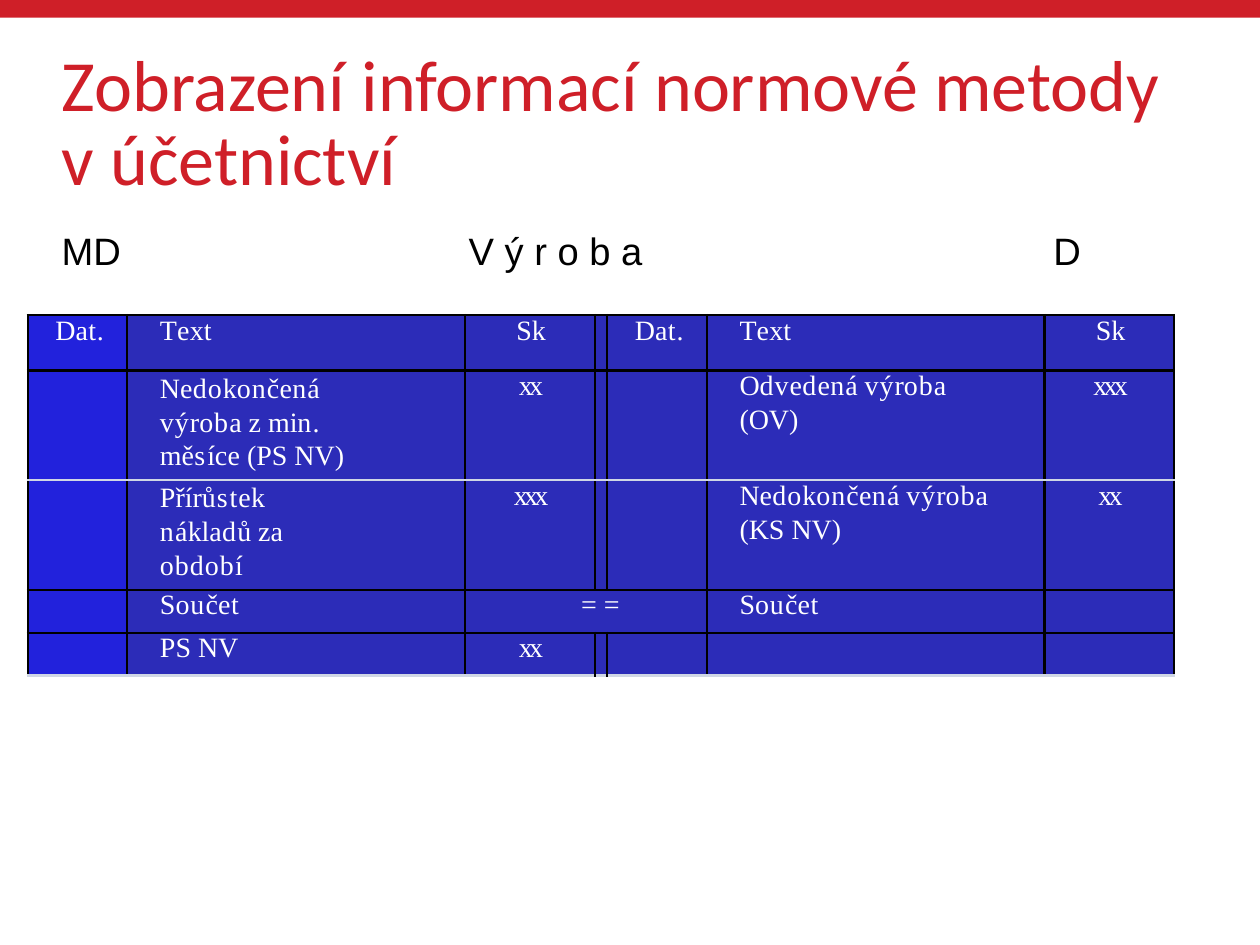
from itertools import groupby

from lxml import etree
from pptx import Presentation
from pptx.dml.color import RGBColor
from pptx.enum.shapes import MSO_SHAPE
from pptx.enum.text import MSO_ANCHOR, PP_ALIGN
from pptx.oxml.ns import qn
from pptx.util import Inches, Pt

RED = RGBColor(0xCF, 0x1F, 0x28)
BLACK = RGBColor(0x00, 0x00, 0x00)
WHITE = RGBColor(0xFF, 0xFF, 0xFF)
BRIGHT_BLUE = RGBColor(0x22, 0x22, 0xDC)
BLUE = RGBColor(0x2C, 0x2C, 0xB8)
PALE = RGBColor(0xD0, 0xD7, 0xE5)
RECT = MSO_SHAPE.RECTANGLE
TOP, MIDDLE = MSO_ANCHOR.TOP, MSO_ANCHOR.MIDDLE
LEFT, CENTER = PP_ALIGN.LEFT, PP_ALIGN.CENTER

# Letter spacing in hundredths of a point; the last letter of a word has none
SPACING = {letter: value for letters, value in (
    ("DNOK", -70), ("SP", -40), ("(rř", -50), ("V", -190), ("x", -210),
    ("k", -80), ("m", -160), ("iíl", -90), ("z", -110), ("aáeěcč", 20),
    ("t", 50), ("s", 110), ("bdnouvýů", 60)) for letter in letters}


def add_spaced_text(p, text):
    """Write text with one run for each stretch of equal letter spacing."""
    pairs = [(ch, 0 if nxt == " " and ch != "x" else SPACING.get(ch, 0))
             for ch, nxt in zip(text, text[1:] + " ")]
    for spacing, group in groupby(pairs, key=lambda pair: pair[1]):
        r = p.add_run()
        r.text = "".join(ch for ch, _ in group)
        for name, value in {"name": "Times New Roman", "size": Pt(16), "bold": False}.items():
            setattr(r.font, name, value)
        r.font.color.rgb = WHITE
        r._r.get_or_add_rPr().set("spc", str(spacing))


def set_borders(cell, borders):
    """Set (color, points) for the left, right, top and bottom edges."""
    tcPr = cell._tc.get_or_add_tcPr()
    for i, (side, (color, width)) in enumerate(zip("LRTB", borders)):
        ln = etree.Element(qn(f"a:ln{side}"), w=str(int(Pt(width))))
        fill = etree.SubElement(ln, qn("a:solidFill"))
        etree.SubElement(fill, qn("a:srgbClr"), val=str(color))
        tcPr.insert(i, ln)


prs = Presentation()
prs.slide_width, prs.slide_height = Inches(10), Inches(7.5)
s = prs.slides.add_slide(prs.slide_layouts[5])

# Top bar
bar = s.shapes.add_shape(RECT, 0, 0, Inches(10), Inches(0.14))
bar.shadow.inherit = False
bar.fill.solid()
bar.fill.fore_color.rgb = RED
bar.line.fill.background()

# Title and account heading
title = s.shapes.title
title.left, title.top, title.width, title.height = map(Inches, (0.49, 0.41, 9.03, 1.18))
heading = s.shapes.add_textbox(*map(Inches, (0.49, 1.81, 8.1, 0.36)))
for sp, text, anchor, font, size, spacing, color in (
        (title, "Zobrazení informací normové metody v účetnictví", MIDDLE, "Calibri", 41.2, 42, RED),
        (heading, "MD\tV ý r o b a\tD", TOP, "Arial", 21.8, 25.9, BLACK)):
    tf = sp.text_frame
    for name, value in {"word_wrap": True, "vertical_anchor": anchor, "margin_left": 0,
                        "margin_right": 0, "margin_top": 0, "margin_bottom": 0}.items():
        setattr(tf, name, value)
    p = tf.paragraphs[0]
    p.alignment, p.line_spacing = LEFT, Pt(spacing)
    r = p.add_run()
    r.text = text
    r.font.name, r.font.size, r.font.color.rgb = font, Pt(size), color

tabs = etree.SubElement(heading.text_frame.paragraphs[0]._p.get_or_add_pPr(), qn("a:tabLst"))
for position in (3.23, 7.87):
    etree.SubElement(tabs, qn("a:tab"), pos=str(int(Inches(position))), algn="l")

# T-account table
rows = [
    ["Dat.", "Text", "Sk", "", "Dat.", "Text", "Sk"],
    ["", "Nedokončená výroba z min. měsíce (PS NV)", "xx", "", "",
     "Odvedená výroba\n(OV)", "xxx"],
    ["", "Přírůstek nákladů za období", "xxx", "", "",
     "Nedokončená výroba\n(KS NV)", "xx"],
    ["", "Součet", "= =", "", "", "Součet", ""],
    ["", "PS NV", "xx", "", "", "", ""],
]
col_widths = [0.79, 2.68, 1.03, 0.1, 0.79, 2.68, 1.03]
row_heights = [0.44, 0.87, 0.87, 0.34, 0.34]
indents = [0.22, 0.26, 0.02, 0, 0.22, 0.26, 0.02]
wrap_margins = {(1, 1): 0.7, (2, 1): 1}
side = (BLACK, 1.44)
rules = [side, (BLACK, 1.5), (PALE, 1.48), side, side, (PALE, 1.44)]

frame = s.shapes.add_table(len(rows), len(col_widths), Inches(0.22), Inches(2.5),
                           Inches(sum(col_widths)), Inches(sum(row_heights)))
table = frame.table
table.first_row = table.horz_banding = False
for column, width in zip(table.columns, col_widths):
    column.width = Inches(width)
for row, height in zip(table.rows, row_heights):
    row.height = Inches(height)

for i, texts in enumerate(rows):
    for j, text in enumerate(texts):
        cell = table.cell(i, j)
        cell.fill.solid()
        cell.fill.fore_color.rgb = BLUE if j else BRIGHT_BLUE
        set_borders(cell, (side, side, rules[i], rules[i + 1]))
        indent = 0.23 if text == "= =" else indents[j]
        for name, value in {"margin_left": Inches(indent), "margin_top": 0, "margin_bottom": 0,
                            "margin_right": Inches(wrap_margins.get((i, j), 0))}.items():
            setattr(cell, name, value)
        tf = cell.text_frame
        for n, line in enumerate(text.split("\n")):
            p = tf.add_paragraph() if n else tf.paragraphs[0]
            p.alignment = CENTER if j in (2, 6) else LEFT
            p.font.size = Pt(16)
            if n:
                p.space_before = Pt(1.9)
            if (i, j) in wrap_margins:
                p.line_spacing = 1.09
            add_spaced_text(p, line)

# The balance sign spans the middle of the account
table.cell(3, 2).merge(table.cell(3, 4))

prs.save("out.pptx")
